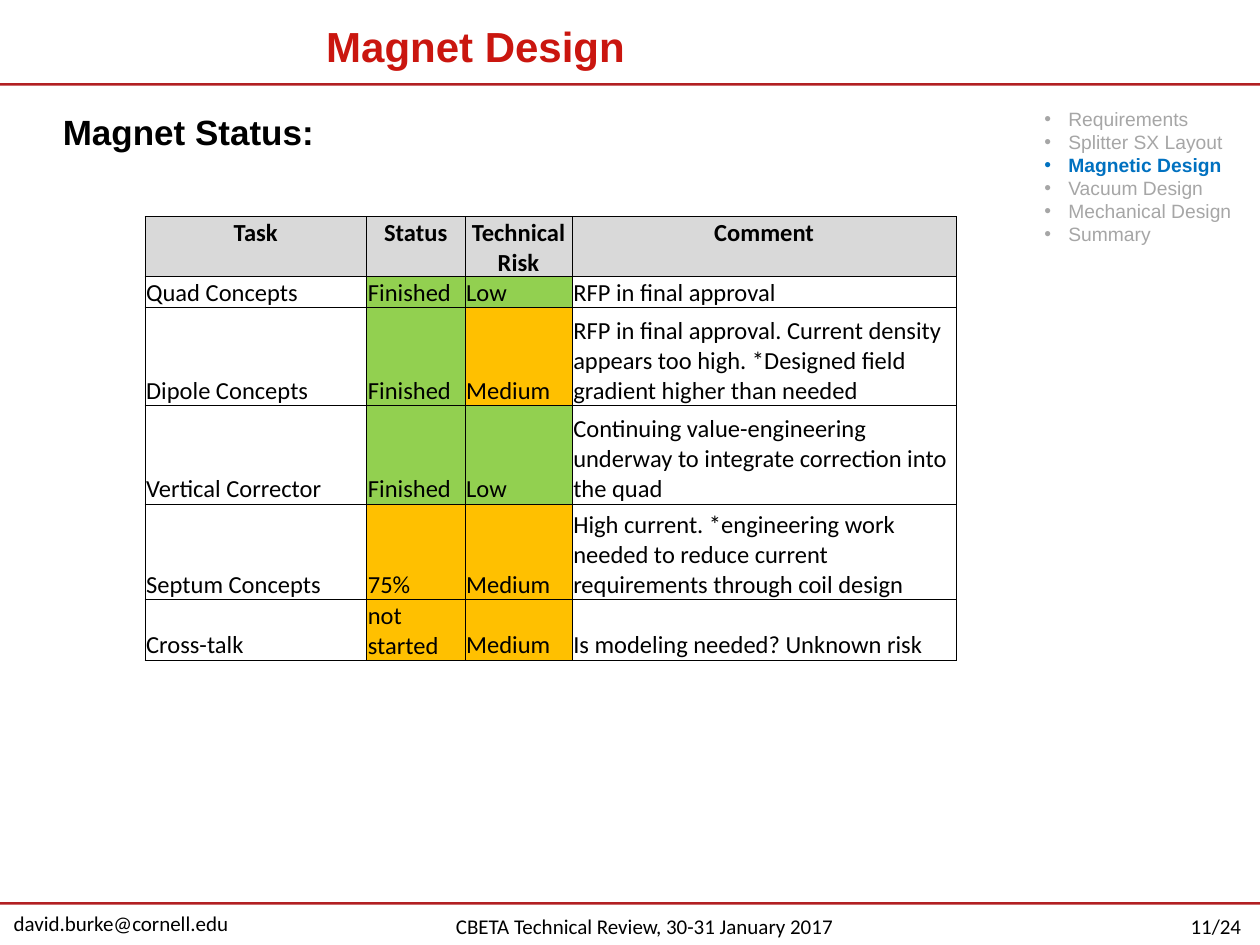
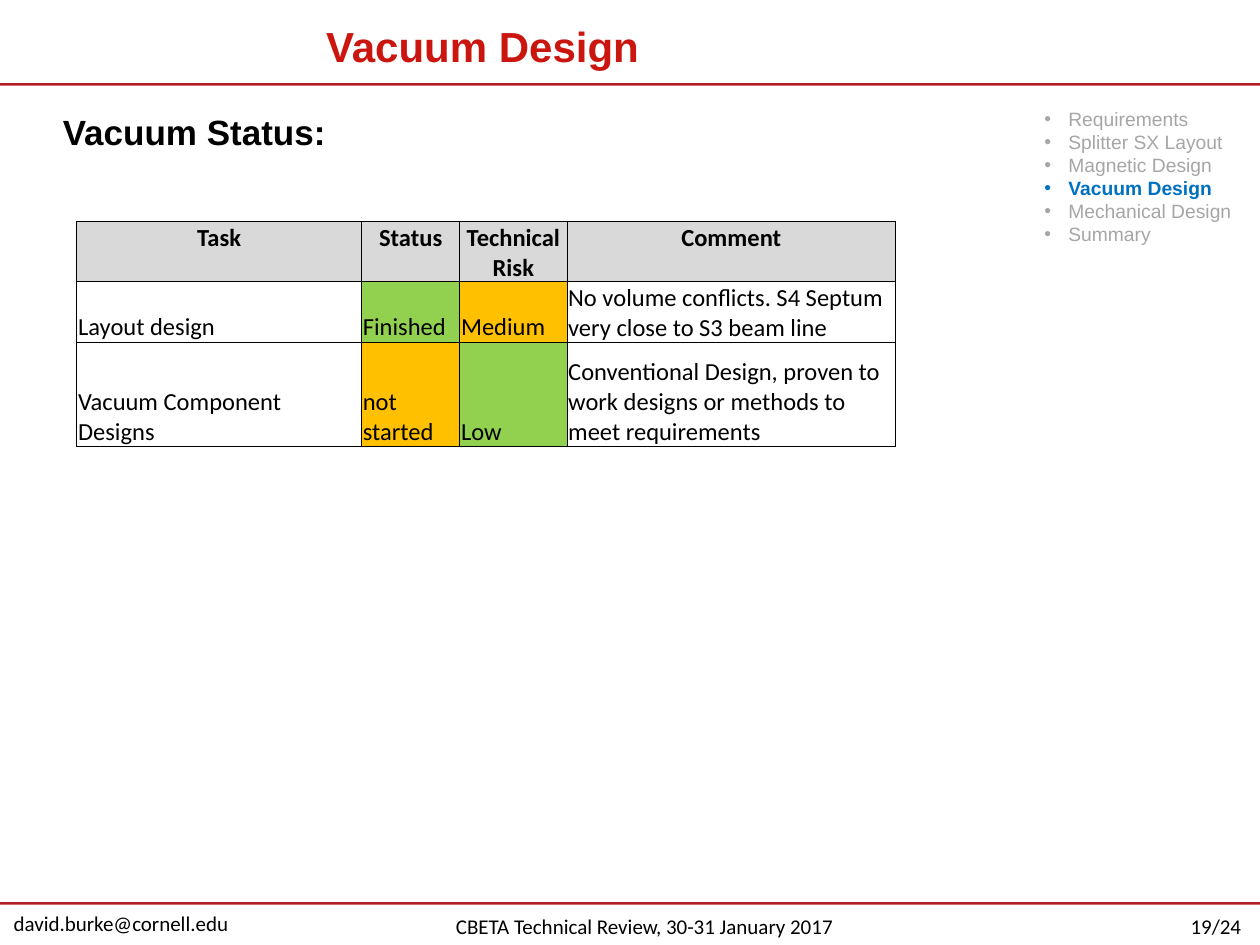
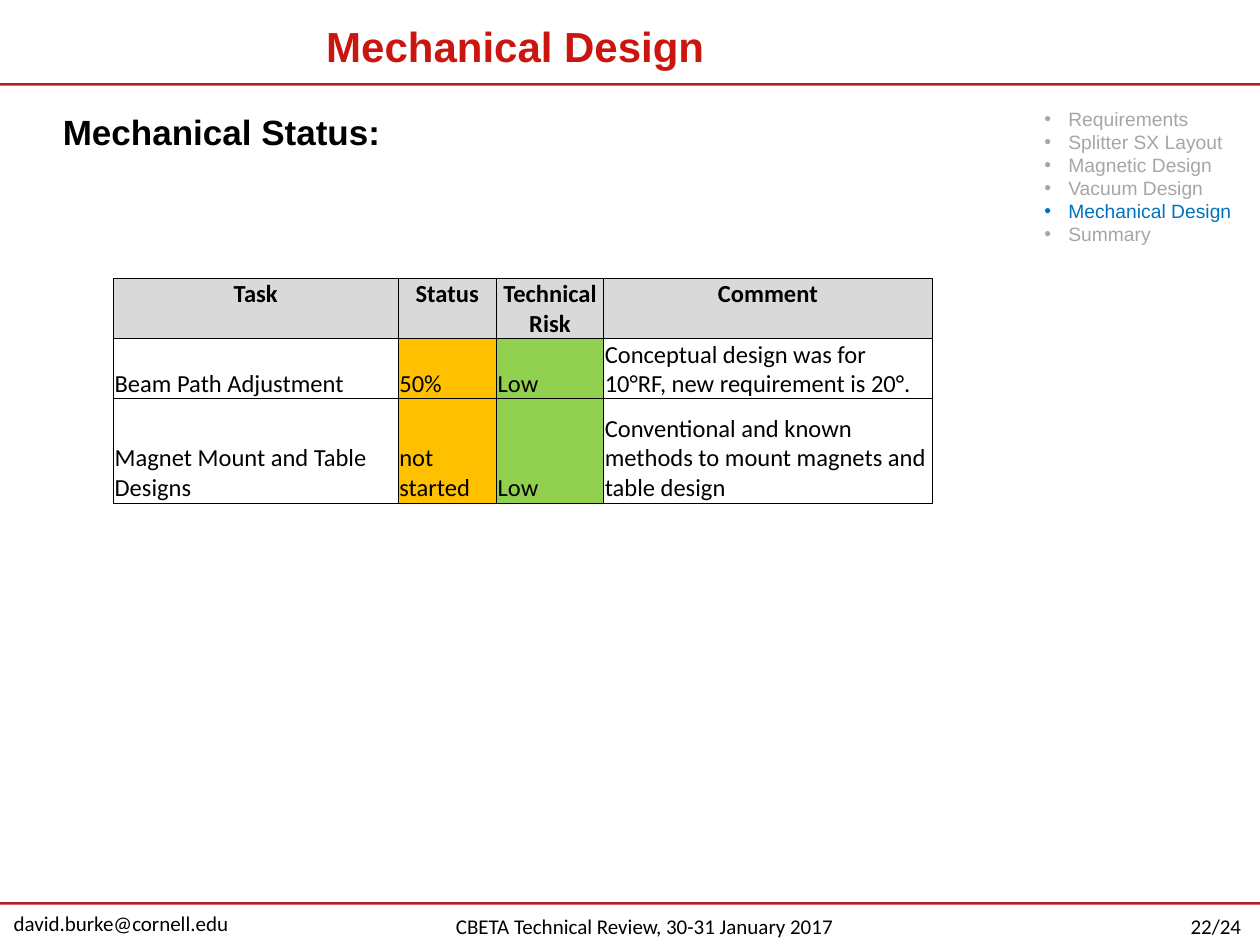
from lxml import etree
from pptx import Presentation
from pptx.dml.color import RGBColor
from pptx.enum.shapes import MSO_SHAPE
from pptx.enum.text import MSO_ANCHOR, MSO_AUTO_SIZE, PP_ALIGN
from pptx.oxml.ns import qn
from pptx.util import Inches, Pt

RECTANGLE = MSO_SHAPE.RECTANGLE
TOP, MIDDLE, BOTTOM = MSO_ANCHOR.TOP, MSO_ANCHOR.MIDDLE, MSO_ANCHOR.BOTTOM
LEFT, CENTER = PP_ALIGN.LEFT, PP_ALIGN.CENTER
GROW, FIXED = MSO_AUTO_SIZE.SHAPE_TO_FIT_TEXT, MSO_AUTO_SIZE.NONE

BLACK = RGBColor(0x00, 0x00, 0x00)
TITLE_RED = RGBColor(0xCA, 0x16, 0x0F)
RULE_RED = RGBColor(0xB2, 0x1F, 0x22)
MUTED = RGBColor(0xA6, 0xA6, 0xA6)
ACTIVE_BLUE = RGBColor(0x00, 0x71, 0xC0)
HEADER_GRAY = RGBColor(0xD9, 0xD9, 0xD9)
GREEN = RGBColor(0x92, 0xD0, 0x50)
AMBER = RGBColor(0xFF, 0xC0, 0x00)

HEADING_FONT = "Arial"
BODY_FONT = "Calibri"
BULLET_INDENT = Inches(0.19)
PAGE_COUNT = 24
TOPICS = ["Requirements", "Splitter SX Layout", "Magnetic Design",
          "Vacuum Design", "Mechanical Design", "Summary"]
HEADINGS = ["Task", "Status", "Technical Risk", "Comment"]
RATING_COLORS = {"Finished": GREEN, "Low": GREEN, "Medium": AMBER,
                 "not started": AMBER, "75%": AMBER, "50%": AMBER}

PAGES = [
    dict(
        title="Magnet Design", heading="Magnet Status:", page=11,
        topic="Magnetic Design", topic_bold=True,
        origin=(1.15, 1.72),
        widths=[1.76, 0.78, 0.85, 3.05],
        heights=[0.42, 0.21, 0.78, 0.78, 0.76, 0.21],
        tasks=[
            ["Quad Concepts", "Finished", "Low", "RFP in final approval"],
            ["Dipole Concepts", "Finished", "Medium",
             "RFP in final approval. Current density appears too high. "
             "*Designed field gradient higher than needed"],
            ["Vertical Corrector", "Finished", "Low",
             "Continuing value-engineering underway to integrate "
             "correction into the quad"],
            ["Septum Concepts", "75%", "Medium",
             "High current. *engineering work needed to reduce current "
             "requirements through coil design"],
            ["Cross-talk", "not started", "Medium",
             "Is modeling needed? Unknown risk"],
        ],
    ),
    dict(
        title="Vacuum Design", heading="Vacuum Status:", page=19,
        topic="Vacuum Design", topic_bold=True,
        origin=(0.61, 1.76),
        widths=[2.26, 0.78, 0.85, 2.61],
        heights=[0.42, 0.42, 0.83],
        tasks=[
            ["Layout design", "Finished", "Medium",
             "No volume conflicts. S4 Septum very close to S3 beam line"],
            ["Vacuum Component Designs", "not started", "Low",
             "Conventional Design, proven to work designs or methods to "
             "meet requirements"],
        ],
    ),
    dict(
        title="Mechanical Design", heading="Mechanical Status:", page=22,
        topic="Mechanical Design", topic_bold=False,
        origin=(0.9, 2.21),
        widths=[2.26, 0.78, 0.85, 2.61],
        heights=[0.42, 0.42, 0.83],
        tasks=[
            ["Beam Path Adjustment", "50%", "Low",
             "Conceptual design was for 10°RF, new requirement is 20°."],
            ["Magnet Mount and Table Designs", "not started", "Low",
             "Conventional and known methods to mount magnets and table "
             "design"],
        ],
    ),
]


def set_font(paragraph, name, size, color, bold=False):
    font = paragraph.font
    font.name, font.size, font.bold = name, Pt(size), bold
    font.color.rgb = color


def add_bullet(paragraph):
    properties = paragraph._p.get_or_add_pPr()
    properties.set("marL", str(BULLET_INDENT))
    properties.set("indent", str(-BULLET_INDENT))
    etree.SubElement(properties, qn("a:buFont"), typeface=HEADING_FONT)
    etree.SubElement(properties, qn("a:buChar"), char="•")


def set_borders(cell):
    """Outline a cell; borders precede the fill in the cell properties."""
    properties = cell._tc.get_or_add_tcPr()
    for index, side in enumerate(("lnL", "lnR", "lnT", "lnB")):
        border = etree.Element(qn(f"a:{side}"), w=str(Pt(0.5)))
        fill = etree.SubElement(border, qn("a:solidFill"))
        etree.SubElement(fill, qn("a:srgbClr"), val=str(BLACK))
        properties.insert(index, border)


class ReviewDeck:
    """Holds the presentation, its shared style and the current slide."""

    def __init__(self):
        self.presentation = Presentation()
        self.presentation.slide_width = Inches(10)
        self.presentation.slide_height = Inches(7.5)
        self.slide = None

    def new_slide(self, title, page):
        layout = self.presentation.slide_layouts[6]
        self.slide = self.presentation.slides.add_slide(layout)
        self.footer("david.burke@cornell.edu", 0.01, 7.18, 2.04)
        self.footer(f"{page}/{PAGE_COUNT}", 9.35, 7.2, 0.65)
        self.footer("CBETA Technical Review, 30-31 January 2017",
                    3.52, 7.2, 3.26)
        for top in (0.66, 7.16):
            self.rule(top)
        self.line_of_text(title, 2.49, 0.07, 5.22, 0.58, HEADING_FONT, 24,
                          TITLE_RED, bold=True, anchor=MIDDLE)

    def rule(self, top):
        band = self.slide.shapes.add_shape(
            RECTANGLE, 0, Inches(top), Inches(10), Inches(0.02))
        band.shadow.inherit = False
        band.fill.solid()
        band.fill.fore_color.rgb = RULE_RED
        band.line.fill.background()

    def text_frame(self, left, top, width, height, wrap=True, fit=FIXED,
                   anchor=TOP):
        box = self.slide.shapes.add_textbox(
            Inches(left), Inches(top), Inches(width), Inches(height))
        frame = box.text_frame
        frame.word_wrap, frame.auto_size = wrap, fit
        frame.vertical_anchor = anchor
        return frame

    def line_of_text(self, text, left, top, width, height, font, size,
                     color=BLACK, bold=False, **frame_options):
        frame = self.text_frame(left, top, width, height, **frame_options)
        paragraph = frame.paragraphs[0]
        paragraph.text = text
        set_font(paragraph, font, size, color, bold)

    def footer(self, text, left, top, width):
        self.line_of_text(text, left, top, width, 0.3, BODY_FONT, 12,
                          wrap=False)

    def heading(self, text):
        self.line_of_text(text, 0.4, 0.83, 7.5, 0.44, HEADING_FONT, 20,
                          bold=True, fit=GROW)

    def topic_list(self, current, current_bold):
        frame = self.text_frame(8.19, 0.8, 1.76, 1.21, fit=GROW)
        for index, topic in enumerate(TOPICS):
            paragraph = (frame.add_paragraph() if index
                         else frame.paragraphs[0])
            paragraph.text = topic
            add_bullet(paragraph)
            active = topic == current
            set_font(paragraph, HEADING_FONT, 11,
                     ACTIVE_BLUE if active else MUTED,
                     active and current_bold)

    def status_table(self, origin, widths, heights, tasks):
        left, top = origin
        table = self.slide.shapes.add_table(
            len(heights), len(widths), Inches(left), Inches(top),
            Inches(sum(widths)), Inches(sum(heights))).table
        table.horz_banding = False
        for column, width in zip(table.columns, widths):
            column.width = Inches(width)
        for row, height in zip(table.rows, heights):
            row.height = Inches(height)
        for row_index, values in enumerate([HEADINGS] + tasks):
            for column_index, value in enumerate(values):
                self.table_cell(table.cell(row_index, column_index), value,
                                is_header=row_index == 0)

    def table_cell(self, cell, text, is_header):
        cell.margin_left = cell.margin_right = Inches(0.01)
        cell.margin_top, cell.margin_bottom = Inches(0.01), 0
        cell.vertical_anchor = TOP if is_header else BOTTOM
        color = HEADER_GRAY if is_header else RATING_COLORS.get(text)
        if color is None:
            cell.fill.background()
        else:
            cell.fill.solid()
            cell.fill.fore_color.rgb = color
        set_borders(cell)
        paragraph = cell.text_frame.paragraphs[0]
        paragraph.text = text
        paragraph.alignment = CENTER if is_header else LEFT
        set_font(paragraph, BODY_FONT, 14, BLACK, is_header)


def main():
    deck = ReviewDeck()
    for page in PAGES:
        deck.new_slide(page["title"], page["page"])
        deck.heading(page["heading"])
        deck.topic_list(page["topic"], page["topic_bold"])
        deck.status_table(page["origin"], page["widths"], page["heights"],
                          page["tasks"])
    deck.presentation.save("out.pptx")


if __name__ == "__main__":
    main()
